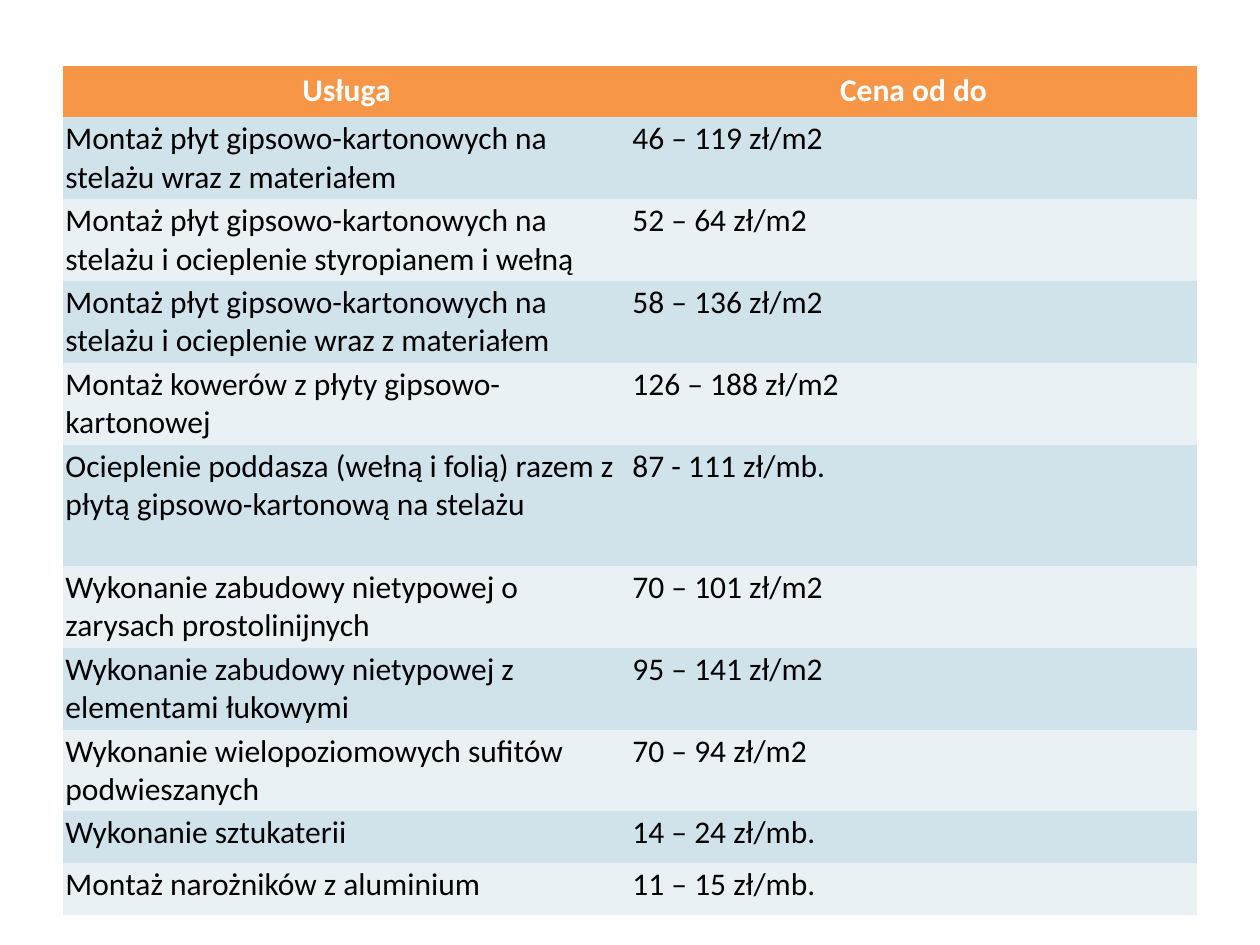
from pptx import Presentation
from pptx.dml.color import RGBColor
from pptx.enum.text import PP_ALIGN
from pptx.oxml.ns import qn
from pptx.util import Inches, Pt

COLORS = {
    "header": "F79646",
    "header_text": "FFFFFF",
    "odd_row": "D0E3EA",
    "even_row": "E9F1F5",
    "text": "000000",
}
NO_STYLE = "{2D5ABB26-0587-4C30-8999-92F81FD0307C}"
ONE_LINE, TWO_LINES, THREE_LINES = 0.41, 0.65, 0.96
COLUMN_WIDTH = 4.5
CELL_MARGIN = 0.02

# Service, price, row height
ROWS = [
    ("Usługa", "Cena od do", ONE_LINE),
    ("Montaż płyt gipsowo-kartonowych na stelażu wraz z materiałem", "46 – 119 zł/m2", TWO_LINES),
    ("Montaż płyt gipsowo-kartonowych na stelażu i ocieplenie styropianem i wełną",
     "52 – 64 zł/m2", TWO_LINES),
    ("Montaż płyt gipsowo-kartonowych na stelażu i ocieplenie wraz z materiałem",
     "58 – 136 zł/m2", TWO_LINES),
    ("Montaż kowerów z płyty gipsowo-kartonowej", "126 – 188 zł/m2", TWO_LINES),
    ("Ocieplenie poddasza (wełną i folią) razem z płytą gipsowo-kartonową na stelażu",
     "87 - 111 zł/mb.", THREE_LINES),
    ("Wykonanie zabudowy nietypowej o zarysach prostolinijnych", "70 – 101 zł/m2", TWO_LINES),
    ("Wykonanie zabudowy nietypowej z elementami łukowymi", "95 – 141 zł/m2", TWO_LINES),
    ("Wykonanie wielopoziomowych sufitów podwieszanych", "70 – 94 zł/m2", TWO_LINES),
    ("Wykonanie sztukaterii", "14 – 24 zł/mb.", ONE_LINE),
    ("Montaż narożników z aluminium", "11 – 15 zł/mb.", ONE_LINE),
]


def fill_cell(cell, text, row_index):
    is_header = row_index == 0
    fill_name = "header" if is_header else ("even_row", "odd_row")[row_index % 2]
    cell.fill.solid()
    cell.fill.fore_color.rgb = RGBColor.from_string(COLORS[fill_name])

    cell.text_frame.text = text
    paragraph = cell.text_frame.paragraphs[0]
    if is_header:
        paragraph.alignment = PP_ALIGN.CENTER
    else:
        cell.margin_left = cell.margin_right = Inches(CELL_MARGIN)
        cell.margin_top = cell.margin_bottom = Inches(CELL_MARGIN)

    font = paragraph.runs[0].font
    font.name = "Calibri"
    font.size = Pt(18)
    font.bold = is_header
    font.color.rgb = RGBColor.from_string(COLORS["header_text" if is_header else "text"])


def add_price_table(slide):
    total_height = sum(height for _, _, height in ROWS)
    frame = slide.shapes.add_table(
        len(ROWS), 2, Inches(0.5), Inches(0.52), Inches(2 * COLUMN_WIDTH), Inches(total_height))
    table = frame.table
    # A style without grid lines keeps the rows free of borders
    table._tbl.tblPr.find(qn("a:tableStyleId")).text = NO_STYLE
    for row_index, (service, price, height) in enumerate(ROWS):
        table.rows[row_index].height = Inches(height)
        for column_index, text in enumerate((service, price)):
            fill_cell(table.cell(row_index, column_index), text, row_index)


def main():
    presentation = Presentation()
    presentation.slide_width = Inches(10)
    presentation.slide_height = Inches(7.5)
    slide = presentation.slides.add_slide(presentation.slide_layouts[6])
    add_price_table(slide)
    presentation.save("out.pptx")


if __name__ == "__main__":
    main()
